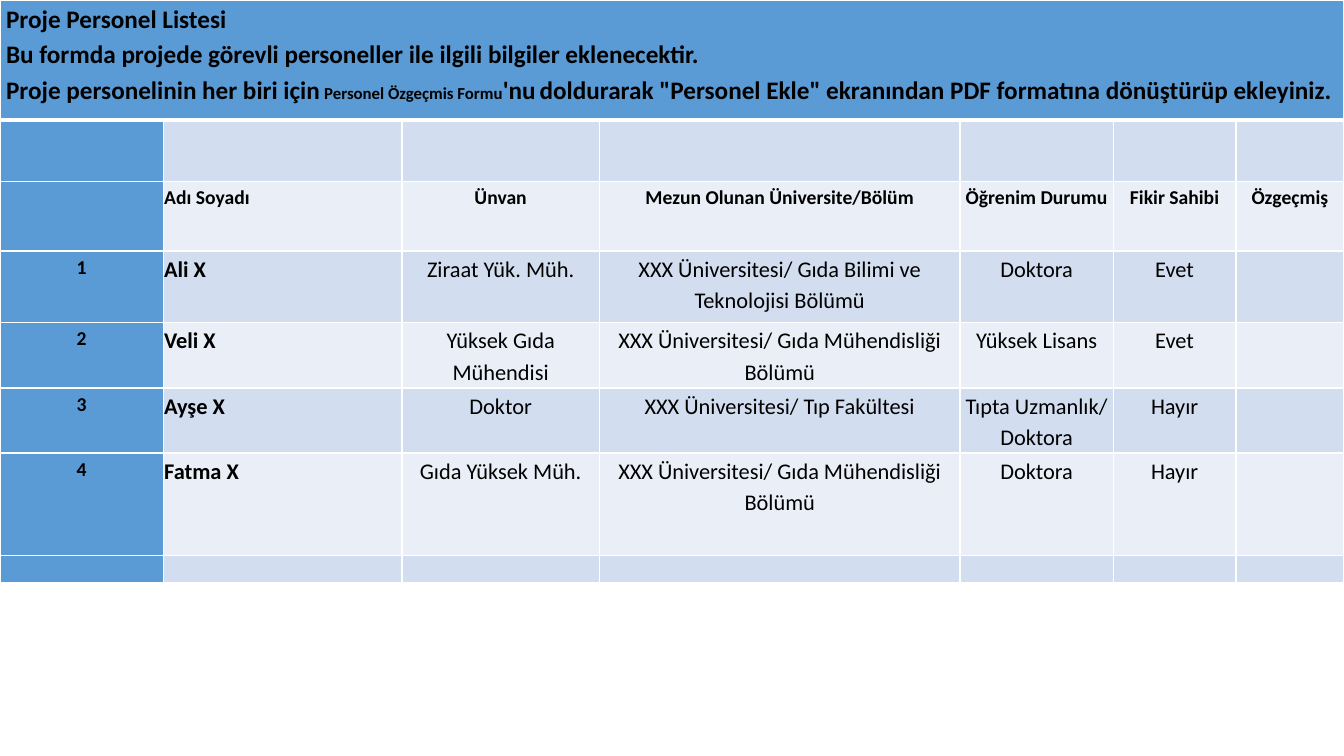
import pptx
import pptx.dml.color
import pptx.enum.text
import pptx.util
from lxml import etree
from pptx.oxml.ns import qn

Inches = pptx.util.Inches
Pt = pptx.util.Pt
RGBColor = pptx.dml.color.RGBColor
CENTER = pptx.enum.text.PP_ALIGN.CENTER
LEFT = pptx.enum.text.PP_ALIGN.LEFT

BLUE = RGBColor(0x5B, 0x9B, 0xD5)
DARK_BAND = RGBColor(0xD2, 0xDE, 0xEF)
LIGHT_BAND = RGBColor(0xEA, 0xEF, 0xF7)
WHITE = RGBColor(0xFF, 0xFF, 0xFF)
BLACK = RGBColor(0, 0, 0)

COLUMN_WIDTHS = [1.62, 2.37, 1.96, 3.58, 1.52, 1.22, 1.07]
ROW_HEIGHTS = [1.19, 0.61, 0.69, 0.71, 0.65, 0.64, 1.02, 0.27]
HEADING_ROW = 2
ROWS = [
    [""] * 7,
    ["", "Adı Soyadı", "Ünvan", "Mezun Olunan Üniversite/Bölüm",
     "Öğrenim Durumu", "Fikir Sahibi", "Özgeçmiş"],
    ["1", "Ali X", "Ziraat Yük. Müh.",
     "XXX Üniversitesi/ Gıda Bilimi ve Teknolojisi Bölümü", "Doktora", "Evet", ""],
    ["2", "Veli X", "Yüksek Gıda Mühendisi",
     "XXX Üniversitesi/ Gıda Mühendisliği Bölümü", "Yüksek Lisans", "Evet", ""],
    ["3", "Ayşe X", "Doktor",
     "XXX Üniversitesi/ Tıp Fakültesi", "Tıpta Uzmanlık/ Doktora", "Hayır", ""],
    ["4", "Fatma X", "Gıda Yüksek Müh.",
     "XXX Üniversitesi/ Gıda Mühendisliği Bölümü", "Doktora", "Hayır", ""],
    [""] * 7,
]
INTRO_LINE = "Bu formda projede görevli personeller ile ilgili bilgiler eklenecektir."
INSTRUCTION = [
    ("Proje personelinin her biri için", 18),
    (" Personel Özgeçmis Formu", 12),
    ("'nu", 18),
    (" ", 12),
    ('doldurarak "Personel Ekle" ekranından PDF formatına dönüştürüp ekleyiniz.', 18),
]


def format_span(span, size, bold):
    span.font.name = "Calibri"
    span.font.size = Pt(size)
    span.font.bold = bold
    span.font.color.rgb = BLACK


def style_cell(cell, fill, margins, top=1, bottom=1):
    cell.margin_left = cell.margin_right = Inches(margins[0])
    cell.margin_top = cell.margin_bottom = Inches(margins[1])
    cell.fill.solid()
    cell.fill.fore_color.rgb = fill
    properties = cell._tc.get_or_add_tcPr()
    sides = [("a:lnL", 1), ("a:lnR", 1), ("a:lnT", top), ("a:lnB", bottom)]
    for position, (side, width) in enumerate(sides):
        line = etree.Element(qn(side), w=str(Pt(width)))
        paint = etree.SubElement(line, qn("a:solidFill"))
        etree.SubElement(paint, qn("a:srgbClr"), val=str(WHITE))
        properties.insert(position, line)


def fill_header(table):
    for column in range(len(COLUMN_WIDTHS)):
        style_cell(table.cell(0, column), BLUE, (0.06, 0), bottom=3)
    header = table.cell(0, 0)
    header.merge(table.cell(0, len(COLUMN_WIDTHS) - 1))
    frame = header.text_frame
    frame.text = "Proje Personel Listesi"
    format_span(frame.paragraphs[0].runs[0], 18, True)
    para = frame.add_paragraph()
    para.text = INTRO_LINE
    format_span(para.runs[0], 18, True)
    para.add_line_break()
    for words, size in INSTRUCTION:
        span = para.add_run()
        span.text = words
        format_span(span, size, True)
    for para in frame.paragraphs:
        para.line_spacing = 1.15


def fill_body_cell(cell, words, row, column):
    band = DARK_BAND if row % 2 else LIGHT_BAND
    style_cell(cell, BLUE if column == 0 else band, (0.01, 0.01),
               top=3 if row == 1 else 1)
    para = cell.text_frame.paragraphs[0]
    if not words:
        etree.SubElement(para._p, qn("a:endParaRPr"), sz="1200")
        return
    para.text = words
    para.alignment = LEFT if column == 1 else CENTER
    para.line_spacing = 1.15
    para.space_before = Pt(3.8)
    is_heading = row == HEADING_ROW
    size = 14 if is_heading or column == 0 else 16
    format_span(para.runs[0], size, is_heading or column < 2)


def add_personnel_table(page, left, top, width, height):
    frame = page.shapes.add_table(
        len(ROW_HEIGHTS), len(COLUMN_WIDTHS),
        Inches(left), Inches(top), Inches(width), Inches(height))
    table = frame.table
    table.first_row = False
    table.horz_banding = False
    for column, share in zip(table.columns, COLUMN_WIDTHS):
        column.width = Inches(width * share / sum(COLUMN_WIDTHS))
    for row, share in zip(table.rows, ROW_HEIGHTS):
        row.height = Inches(height * share / sum(ROW_HEIGHTS))
    fill_header(table)
    for row, entries in enumerate(ROWS, 1):
        for column, words in enumerate(entries):
            fill_body_cell(table.cell(row, column), words, row, column)


def main():
    deck = pptx.Presentation()
    deck.slide_width = Inches(13.33)
    deck.slide_height = Inches(7.5)
    page = deck.slides.add_slide(deck.slide_layouts[6])
    add_personnel_table(page, 0, 0, 13.33, sum(ROW_HEIGHTS))
    deck.save("out.pptx")


if __name__ == "__main__":
    main()
